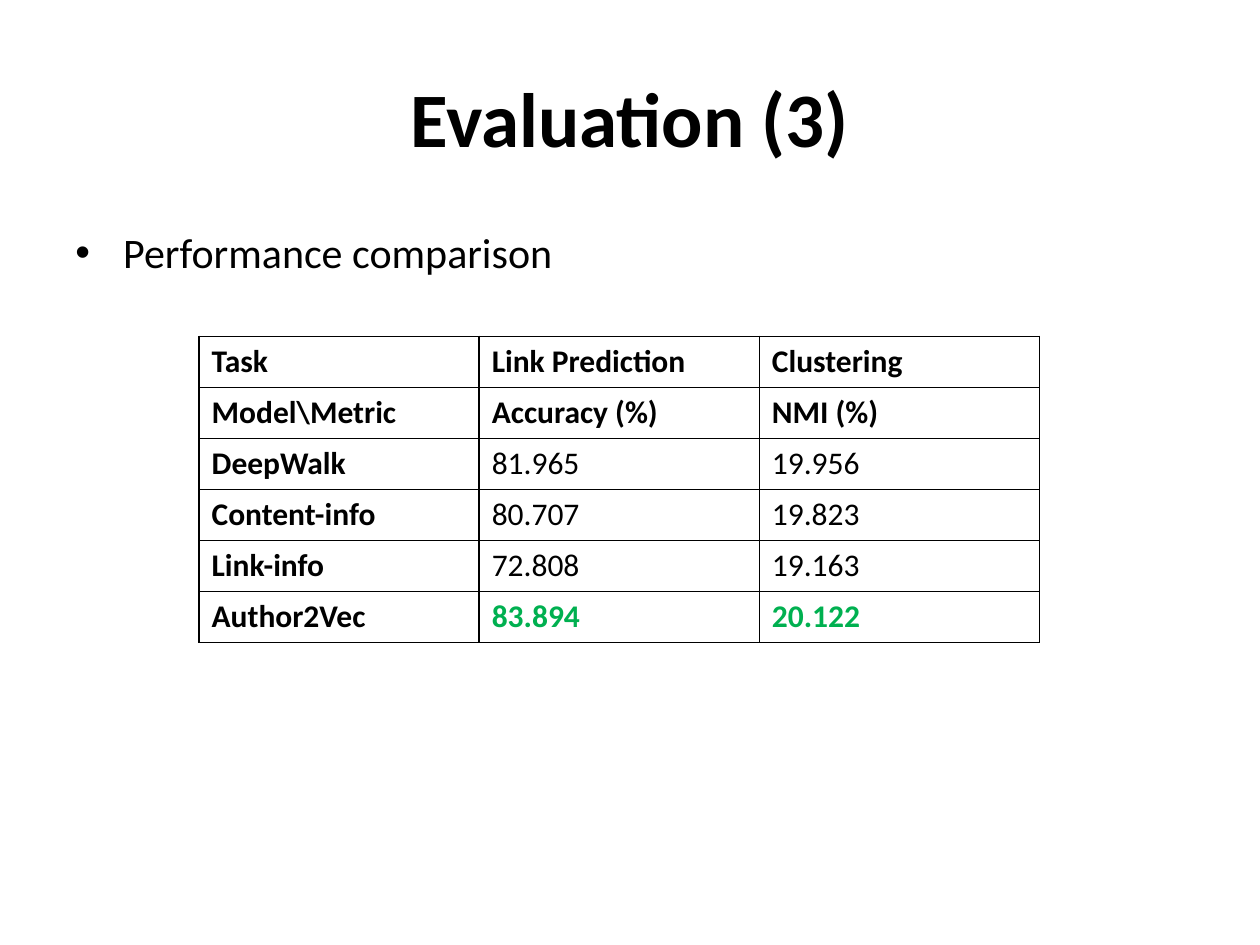
from dataclasses import dataclass

from lxml.etree import SubElement
from pptx import Presentation
from pptx.dml.color import RGBColor
from pptx.enum.text import MSO_ANCHOR, PP_ALIGN
from pptx.oxml.ns import qn
from pptx.util import Inches, Pt

# Content
TITLE = "Evaluation (3)"
BULLET = "Performance comparison"
HEADERS = [
    ("Task", "Link Prediction", "Clustering"),
    ("Model\\Metric", "Accuracy (%)", "NMI (%)"),
]
RESULTS = [
    ("DeepWalk", "81.965", "19.956"),
    ("Content-info", "80.707", "19.823"),
    ("Link-info", "72.808", "19.163"),
    ("Author2Vec", "83.894", "20.122"),
]


@dataclass(frozen=True)
class Theme:
    font: str = "Calibri"
    text: str = "000000"
    best: str = "00B050"
    border: str = "000000"
    border_width: int = Pt(1)
    title: int = Pt(44)
    body: int = Pt(24)
    cell: int = Pt(18)


THEME = Theme()


def style(p, size, bold=False, color=THEME.text):
    p.font.name = THEME.font
    p.font.size = size
    p.font.bold = bold
    p.font.color.rgb = RGBColor.from_string(color)


def add_text(slide, text, left, top, width, height, anchor):
    tf = slide.shapes.add_textbox(
        Inches(left), Inches(top), Inches(width), Inches(height)).text_frame
    tf.word_wrap = True
    tf.vertical_anchor = anchor
    tf.text = text
    return tf.paragraphs[0]


def add_bullet(p, indent):
    pPr = p._p.get_or_add_pPr()
    pPr.set("marL", str(indent))
    pPr.set("indent", str(-indent))
    font = pPr.makeelement(qn("a:buFont"), {"typeface": "Arial"})
    char = pPr.makeelement(qn("a:buChar"), {"char": "•"})
    pPr.insert(0, font)
    font.addnext(char)


def add_borders(cell):
    tcPr = cell._tc.get_or_add_tcPr()
    for side in ("lnL", "lnR", "lnT", "lnB"):
        ln = SubElement(tcPr, qn(f"a:{side}"), w=str(THEME.border_width))
        fill = SubElement(ln, qn("a:solidFill"))
        SubElement(fill, qn("a:srgbClr"), val=THEME.border)


prs = Presentation()
prs.slide_width, prs.slide_height = Inches(10), Inches(7.5)
s = prs.slides.add_slide(prs.slide_layouts[6])

# Title
p = add_text(s, TITLE, 0.5, 0.3, 9, 1.25, MSO_ANCHOR.MIDDLE)
p.alignment = PP_ALIGN.CENTER
style(p, THEME.title, bold=True)

# Bullet
p = add_text(s, BULLET, 0.5, 1.75, 9, 4.95, MSO_ANCHOR.TOP)
style(p, THEME.body)
add_bullet(p, Inches(0.38))

# Results table
rows = HEADERS + RESULTS
best_row = len(rows) - 1
table = s.shapes.add_table(
    len(rows), len(rows[0]),
    Inches(1.58), Inches(2.67), Inches(6.67), Inches(2.43)).table
table.first_row = table.horz_banding = False

for r, row in enumerate(rows):
    for c, text in enumerate(row):
        cell = table.cell(r, c)
        cell.text = text
        add_borders(cell)
        cell.fill.background()
        is_label = r < len(HEADERS) or c == 0
        is_best = r == best_row and c > 0
        style(cell.text_frame.paragraphs[0], THEME.cell,
              bold=is_label or is_best,
              color=THEME.best if is_best else THEME.text)

prs.save("out.pptx")
